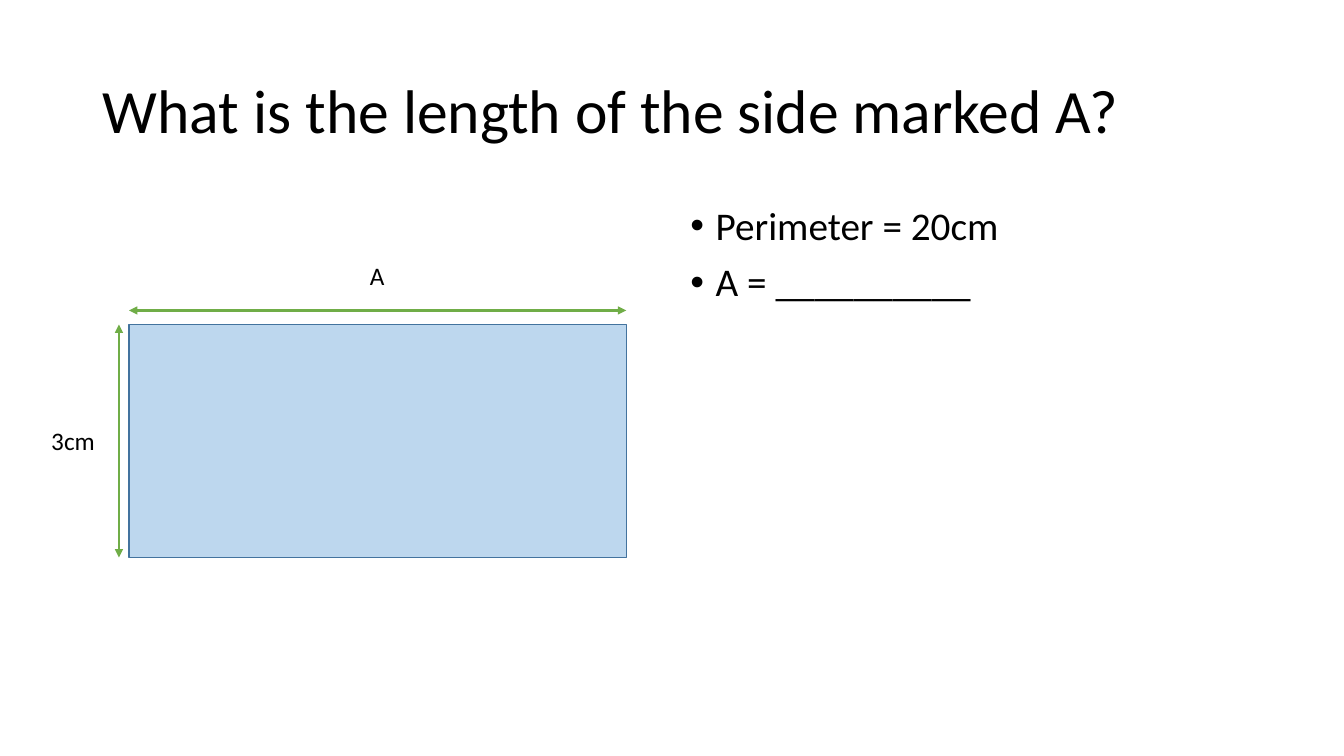
from pptx import Presentation
from pptx.dml.color import RGBColor
from pptx.enum.dml import MSO_THEME_COLOR
from pptx.enum.shapes import MSO_CONNECTOR, MSO_SHAPE
from pptx.enum.text import MSO_ANCHOR, MSO_AUTO_SIZE, PP_ALIGN
from pptx.oxml.ns import qn
from pptx.util import Inches, Pt
from lxml import etree

RECTANGLE = MSO_SHAPE.RECTANGLE
STRAIGHT = MSO_CONNECTOR.STRAIGHT
LEFT = PP_ALIGN.LEFT
TOP, MIDDLE = MSO_ANCHOR.TOP, MSO_ANCHOR.MIDDLE
NO_FIT, GROW = MSO_AUTO_SIZE.NONE, MSO_AUTO_SIZE.SHAPE_TO_FIT_TEXT
WHITE = MSO_THEME_COLOR.BACKGROUND_1

FONT = "Calibri"
COLORS = {"text": "000000", "fill": "BDD7EE", "outline": "43739E", "arrow": "70AD47"}

# Grid of 40 columns and 30 rows
WIDTH, HEIGHT = Inches(13.33), Inches(7.5)
COLUMN, ROW = WIDTH / 40, HEIGHT / 30


def color(name):
    return RGBColor.from_string(COLORS[name])


def grid(left, top, width, height):
    return round(left * COLUMN), round(top * ROW), round(width * COLUMN), round(height * ROW)


def format_paragraph(para, size):
    para.alignment = LEFT
    para.font.name = FONT
    para.font.size = Pt(size)
    para.font.color.rgb = color("text")


def fill_placeholder(holder, area, lines, size, anchor):
    holder.left, holder.top, holder.width, holder.height = grid(*area)
    frame = holder.text_frame
    frame.text = "\n".join(lines)
    frame.auto_size = NO_FIT
    frame.vertical_anchor = anchor
    for para in frame.paragraphs:
        para.line_spacing = 0.9
        format_paragraph(para, size)
    return frame.paragraphs


def add_bullets(paragraphs):
    for index, para in enumerate(paragraphs):
        para.space_before = Pt(10 if index else 0)
        properties = para._p.get_or_add_pPr()
        properties.set("marL", str(Inches(0.25)))
        properties.set("indent", str(-Inches(0.25)))


def add_label(page, area, text, wrap):
    box = page.shapes.add_textbox(*grid(*area))
    frame = box.text_frame
    frame.word_wrap = wrap
    frame.auto_size = GROW
    frame.text = text
    format_paragraph(frame.paragraphs[0], 18)


def add_rectangle(page, area):
    shape = page.shapes.add_shape(RECTANGLE, *grid(*area))
    shape.shadow.inherit = False
    shape.fill.solid()
    shape.fill.fore_color.rgb = color("fill")
    shape.line.color.rgb = color("outline")
    shape.line.width = Pt(1)


def add_dimension(page, left, top, width, height):
    x, y, across, down = grid(left, top, width, height)
    arrow = page.shapes.add_connector(STRAIGHT, x, y, x + across, y + down)
    arrow.line.color.rgb = color("arrow")
    arrow.line.width = Pt(1.5)
    outline = arrow.line._get_or_add_ln()
    for end in ("a:headEnd", "a:tailEnd"):
        etree.SubElement(outline, qn(end), type="triangle")
    etree.SubElement(arrow._element.spPr, qn("a:effectLst"))


def main():
    deck = Presentation()
    deck.slide_width, deck.slide_height = WIDTH, HEIGHT
    page = deck.slides.add_slide(deck.slide_layouts[1])
    page.background.fill.solid()
    page.background.fill.fore_color.theme_color = WHITE

    # Question and facts
    title, body = page.placeholders
    fill_placeholder(title, (2.76, 1.6, 34.5, 5.8),
                     ["What is the length of the side marked A?"], 44, MIDDLE)
    facts = fill_placeholder(body, (20.25, 8, 17, 19.04),
                             ["Perimeter = 20cm", "A = __________"], 28, TOP)
    add_bullets(facts)

    # Rectangle with its dimension arrows
    left, top, width, height = 3.84, 12.88, 14.8, 9.24
    add_rectangle(page, (left, top, width, height))
    add_dimension(page, left, top - 0.56, width, 0)
    add_dimension(page, left - 0.3, top, 0, height)

    # Side labels, centred on their sides
    label_height, letter_width = 1.6, 1.05
    add_label(page, (1.23, top + (height - label_height) / 2, 3.33, label_height), "3cm", True)
    add_label(page, (left + (width - letter_width) / 2, 10.12, letter_width, label_height), "A", False)

    deck.save("out.pptx")


if __name__ == "__main__":
    main()
